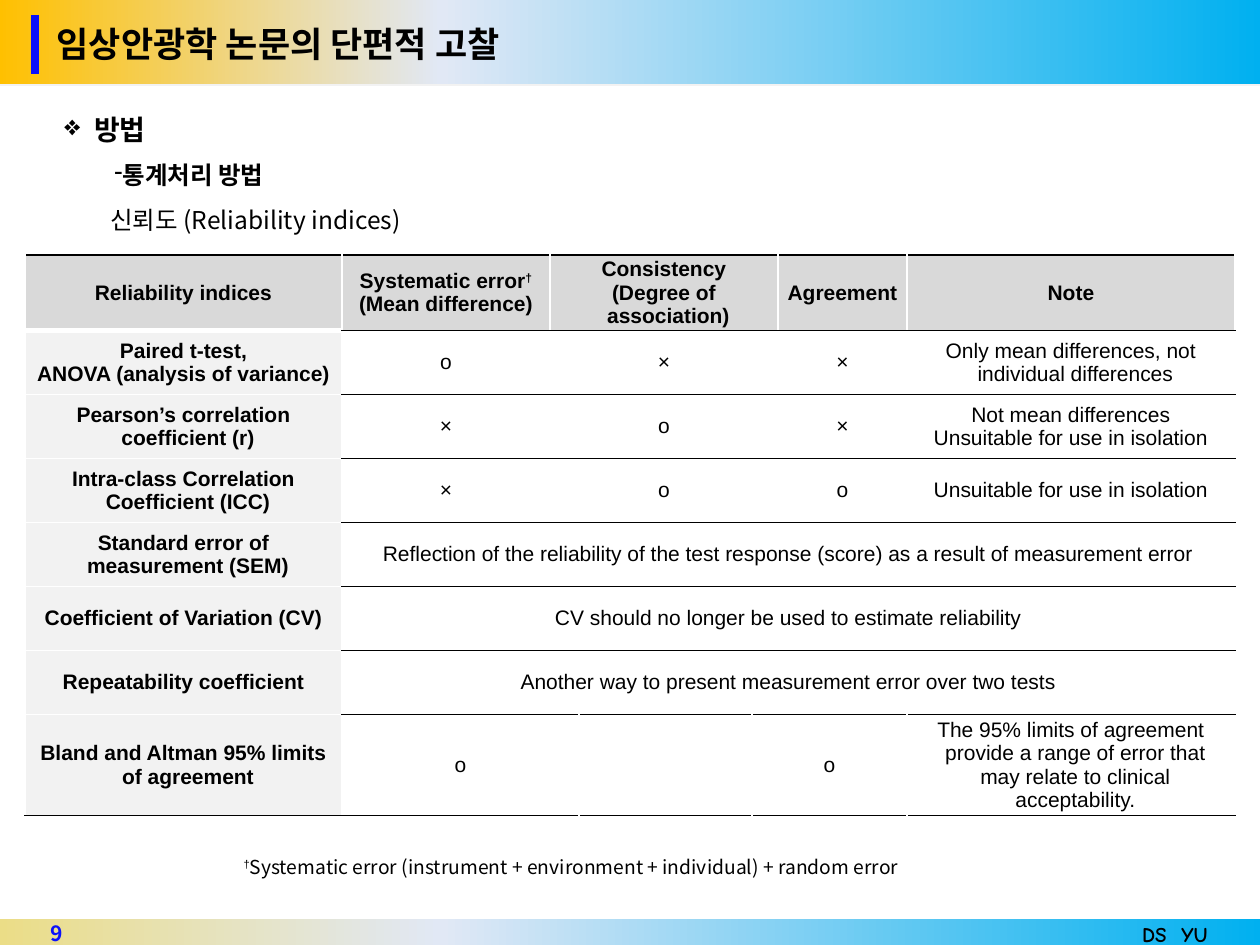
from dataclasses import dataclass

from lxml.etree import SubElement
from pptx import Presentation
from pptx.dml.color import RGBColor
from pptx.enum.shapes import MSO_CONNECTOR, MSO_SHAPE
from pptx.enum.text import MSO_ANCHOR, MSO_AUTO_SIZE, PP_ALIGN
from pptx.oxml.ns import qn
from pptx.util import Pt

EMU_PER_PX = 914400 / 126
DAGGER = "†"


@dataclass(frozen=True)
class Theme:
    black: str = "000000"
    white: str = "FFFFFF"
    accent: str = "0B11FB"
    head_fill: str = "D9D9D9"
    label_fill: str = "F2F2F2"
    header_stops: tuple = ((0, "FFC000"), (35, "E1E8F5"), (100, "00B0F0"))
    footer_stops: tuple = ((0, "EBDD87"), (35, "E1E8F5"), (100, "00B0F0"))
    korean: str = "Noto Sans CJK KR"
    latin: str = "Arial"
    mark: str = "Comic Neue"
    title: int = 20
    heading: int = 16
    body: int = 14
    small: int = 12
    note: int = 11


T = Theme()

COLUMNS = (317, 208, 29, 173, 26, 129, 328)
ROWS = (75,) + (64,) * 6 + (100,)
# Each cell is (first column, columns spanned, text).
HEADER = ((0, 1, "Reliability indices"),
          (1, 1, "Systematic error†\n(Mean difference)"),
          (2, 3, "Consistency\n(Degree of association)"),
          (5, 1, "Agreement"), (6, 1, "Note"))


def rated(label, error, consistency, agreement, note):
    return ((0, 1, label), (1, 1, error), (2, 3, consistency),
            (5, 1, agreement), (6, 1, note))


def remark(label, text):
    return (0, 1, label), (1, 6, text)


CELLS = (
    HEADER,
    rated("Paired t-test,\nANOVA (analysis of variance)", "o", "×", "×",
          "Only mean differences, not individual differences"),
    rated("Pearson’s correlation coefficient (r)", "×", "o", "×",
          "Not mean differences\nUnsuitable for use in isolation"),
    rated("Intra-class Correlation Coefficient (ICC)", "×", "o", "o",
          "Unsuitable for use in isolation"),
    remark("Standard error of measurement (SEM)",
           "Reflection of the reliability of the test response (score) "
           "as a result of measurement error"),
    remark("Coefficient of Variation (CV)",
           "CV should no longer be used to estimate reliability"),
    remark("Repeatability coefficient",
           "Another way to present measurement error over two tests"),
    ((0, 1, "Bland and Altman 95% limits of agreement"), (1, 2, "o"),
     (4, 2, "o"),
     (6, 1, "The 95% limits of agreement provide a range of error that "
            "may relate to clinical acceptability.")),
)


def px(n):
    return round(n * EMU_PER_PX)


def place(box):
    return [px(n) for n in box]


def rgb(color):
    return RGBColor.from_string(color)


def add_run(p, text, size, font, color=T.black, bold=False, raised=False):
    r = p.add_run()
    r.text = text
    r.font.size, r.font.name, r.font.bold = Pt(size), font, bold
    r.font.color.rgb = rgb(color)
    rpr = r.font._element
    SubElement(rpr, qn("a:ea"), typeface=font)
    if raised:
        rpr.set("baseline", "30000")


def indent(p, left, first, bullet=None):
    ppr = p._p.get_or_add_pPr()
    ppr.set("marL", str(px(left)))
    ppr.set("indent", str(px(first)))
    if bullet:
        SubElement(ppr, qn("a:buChar"), char=bullet)
    else:
        SubElement(ppr, qn("a:buNone"))


def add_text(slide, box, align=PP_ALIGN.LEFT, anchor=MSO_ANCHOR.TOP, wrap=True):
    tf = slide.shapes.add_textbox(*place(box)).text_frame
    tf.word_wrap, tf.vertical_anchor = wrap, anchor
    tf.paragraphs[0].alignment = align
    return tf


def add_band(slide, box, stops=None):
    """A full-width strip, in a gradient where stops are given."""
    sp = slide.shapes.add_shape(MSO_SHAPE.RECTANGLE, *place(box))
    sp.shadow.inherit = False
    sp.line.fill.background()
    if not stops:
        sp.fill.solid()
        sp.fill.fore_color.rgb = rgb(T.label_fill)
        return
    sp.fill.gradient()
    sp.fill.gradient_angle = 0
    gs_list = sp._element.spPr.find(qn("a:gradFill")).find(qn("a:gsLst"))
    for gs in list(gs_list):
        gs_list.remove(gs)
    for pos, color in stops:
        gs = SubElement(gs_list, qn("a:gs"), pos=str(pos * 1000))
        SubElement(gs, qn("a:srgbClr"), val=color)


def header(slide, x, y, w, h):
    add_band(slide, (x, y + 1, w, h))
    add_band(slide, (x, y - 1, w, h), T.header_stops)
    bar = slide.shapes.add_connector(
        MSO_CONNECTOR.STRAIGHT, *place((x + 36, y + 15, x + 36, y + 74)))
    bar.line.color.rgb, bar.line.width = rgb(T.accent), Pt(5)
    SubElement(bar._element.spPr, qn("a:effectLst"))

    title = slide.shapes.title
    slide.shapes._spTree.append(title._element)  # in front of the bands
    title.left, title.top, title.width, title.height = place((x + 45, y + 16, 973, 55))
    tf = title.text_frame
    tf.auto_size, tf.vertical_anchor = MSO_AUTO_SIZE.NONE, MSO_ANCHOR.MIDDLE
    p = tf.paragraphs[0]
    p.alignment = PP_ALIGN.LEFT
    add_run(p, "임상안광학 논문의 단편적 고찰", T.title, T.korean, bold=True)


def outline(slide, *box):
    tf = add_text(slide, box)
    lines = (("방법", T.heading, True, 30, -30, "❖", 1),
             ("통계처리 방법", T.body, True, 25, 25, "-", 1.5),
             ("신뢰도 (Reliability indices)", T.body, False, 46, 0, None, 1.5))
    for i, (text, size, bold, left, first, bullet, spacing) in enumerate(lines):
        p = tf.add_paragraph() if i else tf.paragraphs[0]
        p.line_spacing = spacing
        indent(p, left, first, bullet)
        add_run(p, text, size, T.korean, bold=bold)


def set_borders(cell, **sides):
    tcpr = cell._tc.get_or_add_tcPr()
    for side in "LRTB":
        color, width = sides[side]
        ln = SubElement(tcpr, qn(f"a:ln{side}"), w=str(Pt(width)))
        fill = SubElement(ln, qn("a:solidFill"))
        SubElement(fill, qn("a:srgbClr"), val=color)


def format_cell(cell, row, col):
    white, black = (T.white, 1), (T.black, 1)
    top = white if col == 0 and row else black
    bottom = white if col == 0 and row < len(ROWS) - 1 else black
    if row == col == 0:
        bottom = (T.white, 3)
    set_borders(cell, L=white, R=white, T=top, B=bottom)
    if row == 0 or col == 0:
        cell.fill.solid()
        cell.fill.fore_color.rgb = rgb(T.label_fill if row else T.head_fill)
    else:
        cell.fill.background()
    cell.vertical_anchor = MSO_ANCHOR.MIDDLE
    cell.margin_left = cell.margin_right = px(8)
    cell.margin_top = cell.margin_bottom = 0


def fill_cell(cell, text, bold):
    for i, line in enumerate(text.split("\n")):
        p = cell.text_frame.add_paragraph() if i else cell.text_frame.paragraphs[0]
        p.alignment = PP_ALIGN.CENTER
        indent(p, 9, -35)
        for part in line.partition(DAGGER):
            if part:
                add_run(p, part, T.small, T.latin, bold=bold, raised=part == DAGGER)


def reliability_table(slide, x, y):
    table = slide.shapes.add_table(
        len(ROWS), len(COLUMNS), *place((x, y, sum(COLUMNS), sum(ROWS)))).table
    table.first_row = table.horz_banding = False
    for column, width in zip(table.columns, COLUMNS):
        column.width = px(width)
    for r, height in enumerate(ROWS):
        table.rows[r].height = px(height)
        for c in range(len(COLUMNS)):
            format_cell(table.cell(r, c), r, c)
        for c, span, text in CELLS[r]:
            cell = table.cell(r, c)
            if span > 1:
                cell.merge(table.cell(r, c + span - 1))
            fill_cell(cell, text, bold=r == 0 or c == 0)


def footnote(slide, *box):
    p = add_text(slide, box, PP_ALIGN.CENTER, wrap=False).paragraphs[0]
    add_run(p, DAGGER, T.note, T.latin, raised=True)
    add_run(p, "Systematic error (instrument + environment + individual) + random error",
            T.note, T.korean)


def footer(slide, x, y, w, h):
    add_band(slide, (x, y, w, h), T.footer_stops)
    mark = add_text(slide, (x + 1100, y - 4, 152, 38), PP_ALIGN.CENTER)
    add_run(mark.paragraphs[0], "DS  YU", T.small, T.mark, bold=True)
    number = add_text(slide, (x + 16, y - 8, 84, 45), PP_ALIGN.CENTER, MSO_ANCHOR.MIDDLE)
    add_run(number.paragraphs[0], "9", T.small, T.korean, T.accent, bold=True)


def main():
    prs = Presentation()
    prs.slide_width, prs.slide_height = px(1260), px(945)
    slide = prs.slides.add_slide(prs.slide_layouts[5])
    header(slide, -1, 0, 1262, 85)
    footer(slide, -1, 919, 1262, 29)
    reliability_table(slide, 25, 255)
    outline(slide, 52, 106, 1144, 136)
    footnote(slide, 218, 849, 707, 37)
    prs.save("out.pptx")


if __name__ == "__main__":
    main()
